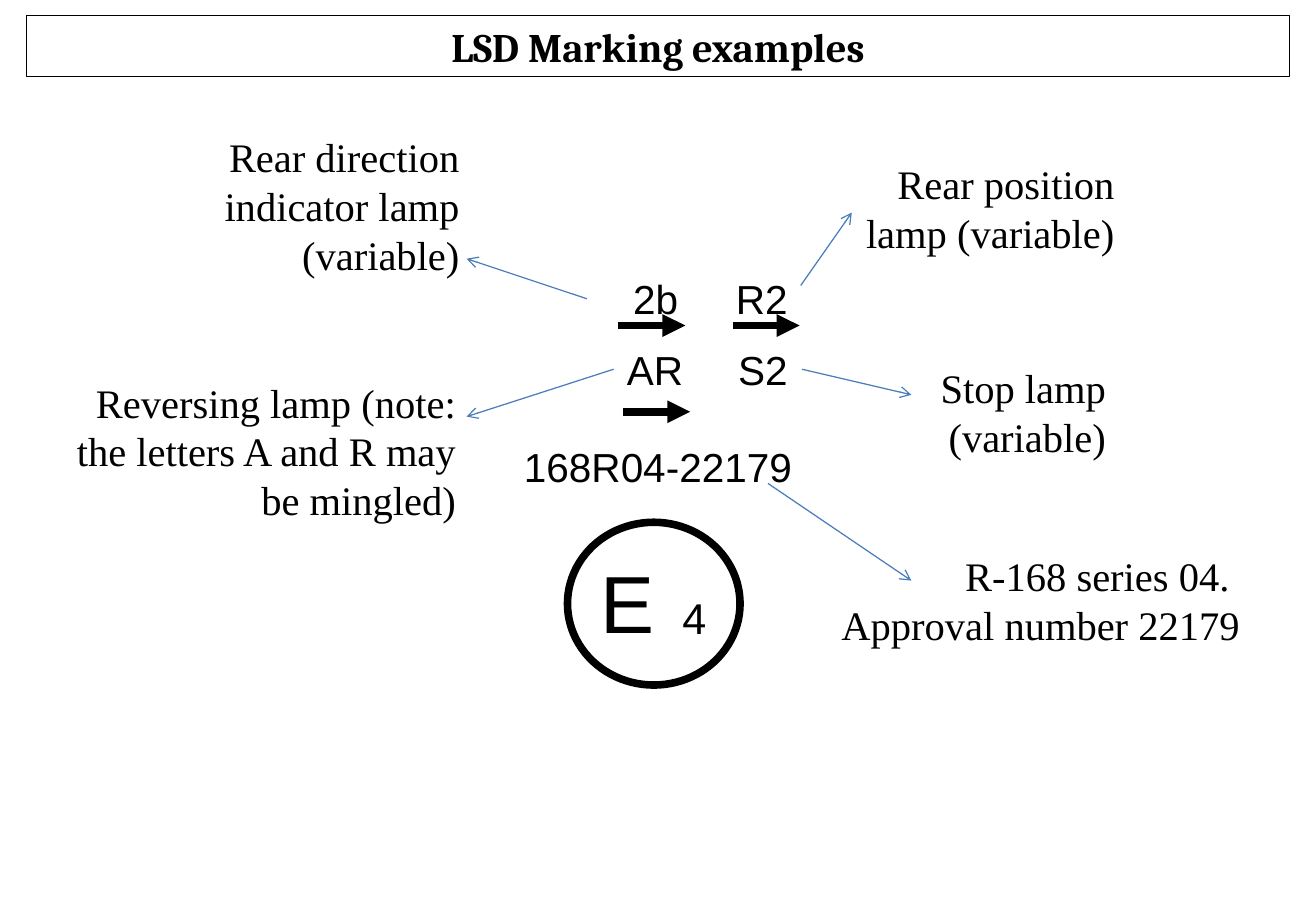
from dataclasses import dataclass

from lxml.etree import SubElement
from pptx import Presentation
from pptx.dml.color import RGBColor
from pptx.enum.shapes import MSO_CONNECTOR as Connector, MSO_SHAPE as Preset
from pptx.enum.text import MSO_ANCHOR as Anchor, PP_ALIGN as Align
from pptx.oxml.ns import qn
from pptx.util import Pt

PX = 9144
SLIDE_SIZE = (1083, 750)


@dataclass(frozen=True)
class Theme:
    ink: RGBColor = RGBColor(0x00, 0x00, 0x00)
    pointer: RGBColor = RGBColor(0x4A, 0x7E, 0xBB)
    title_font: str = "Cambria"
    mark_font: str = "Arial"
    note_font: str = "Times New Roman"
    text_size: int = 24
    emblem_sizes: tuple = (48, 60, 44)
    thin: float = 0.75
    thick: float = 4.5


THEME = Theme()

TITLE = ("LSD Marking examples", (22, 13, 1039, 50))
APPROVAL = ("168R04-22179", (408, 359, 267, 50))
CIRCLE = (467, 430, 142, 134)
EMBLEM = (("E", " ", "4"), (455, 433, 165, 111))
EMBLEM_BASELINE = "-2000"

SYMBOLS = [
    ("2b", (510, 221, 58, 50)),
    ("R2", (595, 221, 63, 50)),
    ("AR", (505, 279, 67, 50)),
    ("S2", (597, 279, 61, 50)),
]
DIRECTION_LENGTH = 55
DIRECTION_STARTS = [(509, 268), (603, 268), (513, 339)]

NOTES = [
    ("Rear direction indicator lamp (variable)", (164, 104, 224, 131), (483, 246), (384, 213)),
    ("Rear position lamp (variable)", (699, 126, 228, 91), (659, 235), (701, 175)),
    ("Stop lamp (variable)", (750, 294, 170, 91), (660, 304), (750, 325)),
    ("Reversing lamp (note: the letters A and R may be mingled)", (46, 306, 339, 131), (505, 304), (384, 343)),
    ("R-168 series 04. \nApproval number 22179", (644, 449, 386, 91), (632, 398), (750, 478)),
]


def emu(lengths):
    return [length * PX for length in lengths]


def style_run(run, font_name, size, bold=False):
    run.font.name = font_name
    run.font.size = Pt(size)
    run.font.bold = bold
    run.font.color.rgb = THEME.ink


def write(shape, text, font_name, align, bold=False, space_after=0):
    shape.text_frame.text = text
    for paragraph in shape.text_frame.paragraphs:
        paragraph.alignment = align
        paragraph.space_after = Pt(space_after)
        for run in paragraph.runs:
            style_run(run, font_name, THEME.text_size, bold)


def add_text_box(slide, box, wrap=True):
    shape = slide.shapes.add_textbox(*emu(box))
    shape.text_frame.word_wrap = wrap
    return shape


def add_outline(slide, preset, box, width):
    shape = slide.shapes.add_shape(preset, *emu(box))
    shape.shadow.inherit = False
    shape.fill.background()
    shape.line.color.rgb = THEME.ink
    shape.line.width = Pt(width)
    return shape


def add_arrow(slide, start, end, color, width, head):
    arrow = slide.shapes.add_connector(Connector.STRAIGHT, *emu(start + end))
    arrow.line.color.rgb = color
    arrow.line.width = Pt(width)
    SubElement(arrow.line._get_or_add_ln(), qn("a:tailEnd"), type=head)
    SubElement(arrow._element.spPr, qn("a:effectLst"))


def add_emblem(slide):
    add_outline(slide, Preset.OVAL, CIRCLE, THEME.thick)
    parts, box = EMBLEM
    paragraph = add_text_box(slide, box).text_frame.paragraphs[0]
    paragraph.alignment = Align.CENTER
    for part, size in zip(parts, THEME.emblem_sizes):
        run = paragraph.add_run()
        run.text = part
        style_run(run, THEME.mark_font, size)
    run.font._element.set("baseline", EMBLEM_BASELINE)


def add_marking(slide):
    text, box = APPROVAL
    write(add_text_box(slide, box), text, THEME.mark_font, Align.CENTER)
    add_emblem(slide)
    for text, box in SYMBOLS:
        write(add_text_box(slide, box, wrap=False), text, THEME.mark_font, Align.RIGHT, space_after=6)
    for left, top in DIRECTION_STARTS:
        end = (left + DIRECTION_LENGTH, top)
        add_arrow(slide, (left, top), end, THEME.ink, THEME.thick, "triangle")


def main():
    presentation = Presentation()
    presentation.slide_width, presentation.slide_height = emu(SLIDE_SIZE)
    slide = presentation.slides.add_slide(presentation.slide_layouts[6])

    add_marking(slide)
    text, box = TITLE
    title = add_outline(slide, Preset.RECTANGLE, box, THEME.thin)
    title.text_frame.word_wrap = True
    title.text_frame.vertical_anchor = Anchor.MIDDLE
    write(title, text, THEME.title_font, Align.CENTER, bold=True)
    for text, box, start, end in NOTES:
        write(add_text_box(slide, box), text, THEME.note_font, Align.RIGHT)
        add_arrow(slide, start, end, THEME.pointer, THEME.thin, "arrow")

    presentation.save("out.pptx")


if __name__ == "__main__":
    main()
